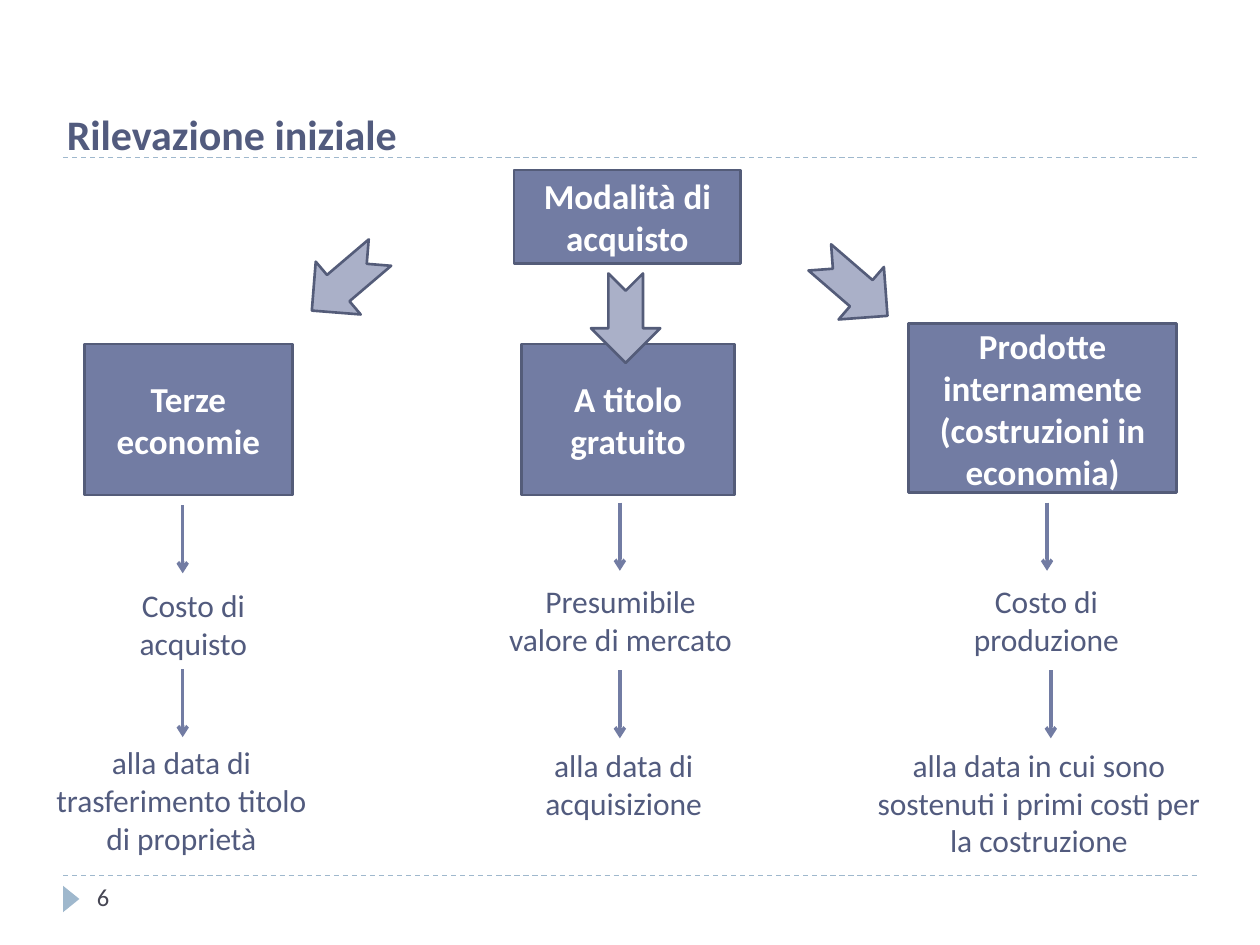
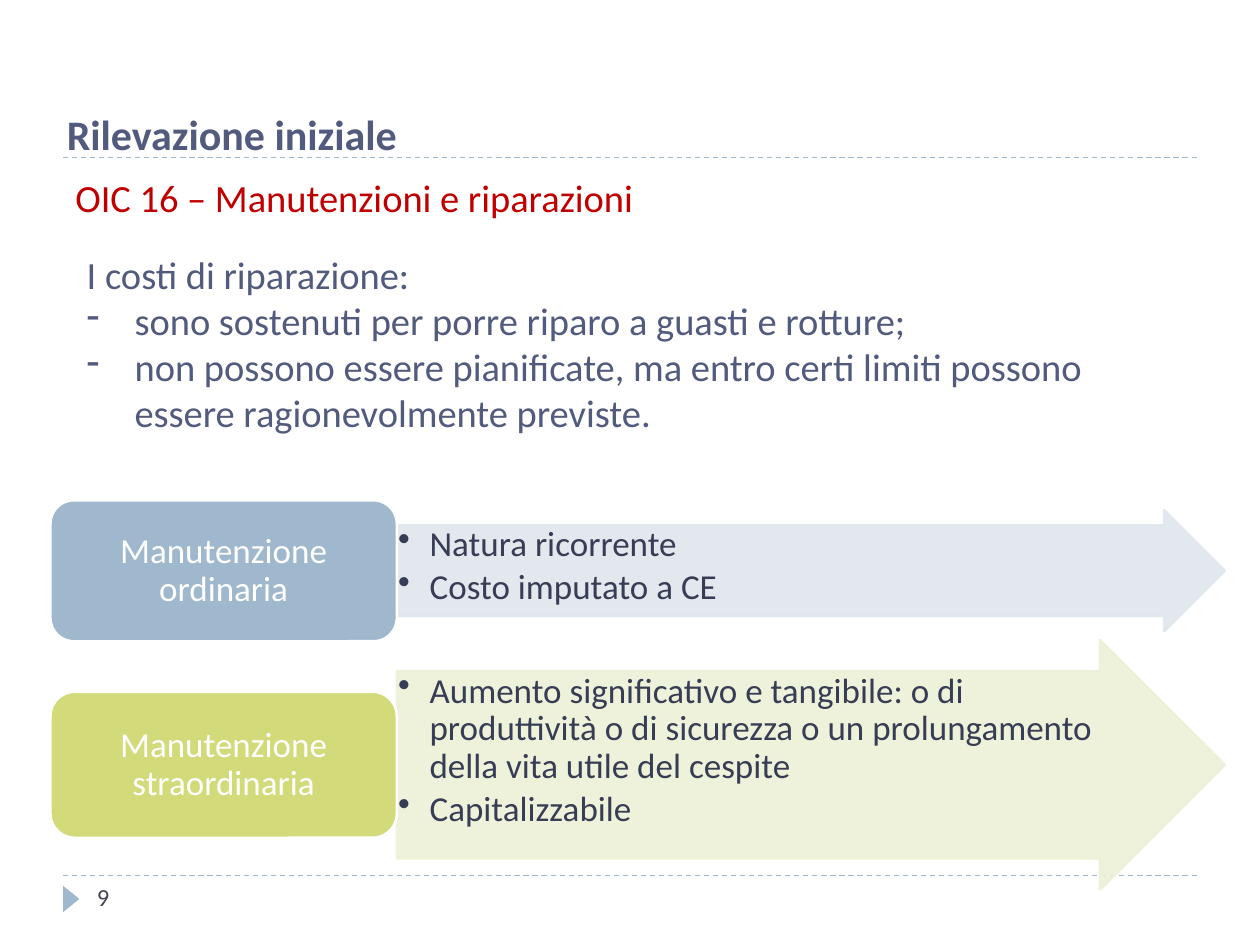
from dataclasses import dataclass

from pptx import Presentation
from pptx import util as u
from pptx.dml.color import RGBColor
from pptx.enum import dml, shapes, text
from pptx.oxml.ns import qn
from lxml import etree


@dataclass(frozen=True)
class Theme:
    font: str = "Calibri"
    slate: str = "727CA3"
    slate_edge: str = "545C79"
    slate_pale: str = "AAB0C8"
    heading: str = "525B7E"
    ink: str = "373D54"
    number: str = "464653"
    red: str = "C00000"
    sky: str = "9FB8CD"
    sky_pale: str = "DFE6ED"
    lime: str = "D2DA7A"
    lime_pale: str = "EEF1D7"
    white: str = "FFFFFF"
    title_size: int = 24
    body_size: int = 22
    box_size: int = 20
    step_size: int = 18
    number_size: int = 14


theme = Theme()
KIND = shapes.MSO_SHAPE
ALIGN = text.PP_ALIGN
ANCHOR = text.MSO_ANCHOR


def write(box, lines, size, color, bold=False, align=ALIGN.LEFT, anchor=ANCHOR.TOP,
          bullet=None, indent=0, spacing=None, after=0, inset=None):
    """Fill a shape with paragraphs; a line starting with the bullet sign gets a hanging indent."""
    frame = box.text_frame
    frame.word_wrap = True
    frame.auto_size = text.MSO_AUTO_SIZE.NONE
    frame.vertical_anchor = anchor
    if inset is not None:
        frame.margin_left = frame.margin_right = u.Inches(inset)
        frame.margin_top = frame.margin_bottom = u.Inches(inset)
    for index, line in enumerate(lines):
        para = frame.paragraphs[0] if index == 0 else frame.add_paragraph()
        para.alignment = align
        para.space_before, para.space_after = u.Pt(0), u.Pt(after)
        if spacing:
            para.line_spacing = spacing
        if bullet and line.startswith(bullet):
            line = line[len(bullet):].strip()
            props = para._p.get_or_add_pPr()
            props.set("marL", str(u.Inches(indent)))
            props.set("indent", str(-u.Inches(indent)))
            etree.SubElement(props, qn("a:buChar")).set("char", bullet)
        span = para.add_run()
        span.text = line
        span.font.name = theme.font
        span.font.size = u.Pt(size)
        span.font.bold = bold
        span.font.color.rgb = RGBColor.from_string(color)


def draw(page, kind, area, fill=None, edge=None, width=1.5):
    """Add a preset shape, or a connector from (x1, y1) to (x2, y2) when kind is None."""
    lengths = [u.Inches(value) for value in area]
    if kind is None:
        item = page.shapes.add_connector(shapes.MSO_CONNECTOR.STRAIGHT, *lengths)
        etree.SubElement(item.element.spPr, qn("a:effectLst"))
    else:
        item = page.shapes.add_shape(kind, *lengths)
        item.shadow.inherit = False
        item.fill.solid()
        item.fill.fore_color.rgb = RGBColor.from_string(fill)
    if edge:
        item.line.color.rgb = RGBColor.from_string(edge)
        item.line.width = u.Pt(width)
    else:
        item.line.fill.background()
    return item


deck = Presentation()
deck.slide_width, deck.slide_height = u.Inches(10), u.Inches(7.5)
layout = deck.slide_layouts[5]

# Shared slide parts: title and page number on each slide, rules and marker on the layout
pages = []
for number in ("6", "9"):
    page = deck.slides.add_slide(layout)
    title = page.shapes.title
    title.left, title.top = u.Inches(0.43), u.Inches(0.81)
    title.width, title.height = u.Inches(8.91), u.Inches(0.5)
    write(title, ["Rilevazione iniziale"], theme.title_size, theme.heading, bold=True)
    box = page.shapes.add_textbox(u.Inches(0.67), u.Inches(6.95), u.Inches(2.17), u.Inches(0.4))
    write(box, [number], theme.number_size, theme.number)
    pages.append(page)
purchase, upkeep = pages

marker = draw(purchase, KIND.ISOSCELES_TRIANGLE, (0.46, 7.07, 0.21, 0.13), theme.sky)
marker.rotation = 90
shared = [marker]
for y in (1.25, 6.95):
    rule = draw(purchase, None, (0.5, y, 9.5, y), edge=theme.sky, width=0.75)
    rule.line.dash_style = dml.MSO_LINE.DASH
    shared.append(rule)
for part in shared:
    layout.shapes.element.append(part.element)

# Slide 1: ways of purchase
methods = [
    ("Modalità di acquisto", (4.08, 1.35, 1.8, 0.74)),
    ("Terze economie", (0.67, 2.73, 1.65, 1.2)),
    ("A titolo gratuito", (4.14, 2.73, 1.69, 1.2)),
    ("Prodotte internamente (costruzioni in economia)", (7.21, 2.57, 2.13, 1.34)),
]
for label, area in methods:
    box = draw(purchase, KIND.RECTANGLE, area, theme.slate, theme.slate_edge)
    write(box, [label], theme.box_size, theme.white, bold=True,
          align=ALIGN.CENTER, anchor=ANCHOR.MIDDLE)

for left, top, angle in ((2.39, 1.96, 139.6), (4.61, 2.25, 90), (6.42, 2, 40.8)):
    arrow = draw(purchase, KIND.NOTCHED_RIGHT_ARROW, (left, top, 0.71, 0.55),
                 theme.slate_pale, theme.slate_edge)
    arrow.rotation = angle

# Each step: arrow x, arrow top, then the text below it
steps = [
    (1.45, 4.01, "Costo di acquisto", (0.67, 4.6, 1.73, 0.71)),
    (1.45, 5.31, "alla data di trasferimento titolo di proprietà", (0.28, 5.85, 2.32, 1.01)),
    (4.92, 3.99, "Presumibile valore di mercato", (3.9, 4.57, 2.05, 0.71)),
    (4.92, 5.32, "alla data di acquisizione", (4.06, 5.87, 1.78, 0.71)),
    (8.31, 3.99, "Costo di produzione", (7.28, 4.57, 2.05, 0.71)),
    (8.34, 5.32, "alla data in cui sono sostenuti i primi costi per la costruzione",
     (6.77, 5.87, 2.95, 1.01)),
]
for x, top, label, area in steps:
    arrow = draw(purchase, None, (x, top, x, top + 0.54), edge=theme.slate, width=2)
    etree.SubElement(arrow.line._get_or_add_ln(), qn("a:tailEnd")).set("type", "arrow")
    box = purchase.shapes.add_textbox(*[u.Inches(value) for value in area])
    write(box, [label], theme.step_size, theme.heading, align=ALIGN.CENTER)

# Slide 2: maintenance and repairs
box = upkeep.shapes.add_textbox(u.Inches(0.5), u.Inches(1.33), u.Inches(9), u.Inches(0.55))
write(box, ["OIC 16 – Manutenzioni e riparazioni"], theme.body_size, theme.red,
      align=ALIGN.JUSTIFY)
box = upkeep.shapes.add_textbox(u.Inches(0.59), u.Inches(1.94), u.Inches(8.9), u.Inches(1.58))
write(box, ["I costi di riparazione:",
            "- sono sostenuti per porre riparo a guasti e rotture;",
            "- non possono essere pianificate, ma entro certi limiti possono "
            "essere ragionevolmente previste."],
      theme.body_size, theme.heading, bullet="-", indent=0.38)

upkeep_types = [
    ("Manutenzione ordinaria", theme.sky, (0.4, 3.97, 2.75, 1.12),
     theme.sky_pale, (3.15, 4.05, 6.57, 0.96), (3.15, 4.17, 6.21, 0.72),
     ["• Natura ricorrente", "• Costo imputato a CE"]),
    ("Manutenzione straordinaria", theme.lime, (0.4, 5.49, 2.75, 1.16),
     theme.lime_pale, (3.15, 5.08, 6.57, 1.98), (3.15, 5.33, 5.83, 1.48),
     ["• Aumento significativo e tangibile: o di produttività o di sicurezza "
      "o un prolungamento della vita utile del cespite", "• Capitalizzabile"]),
]
for label, color, label_area, pale, arrow_area, text_area, effects in upkeep_types:
    arrow = draw(upkeep, KIND.RIGHT_ARROW, arrow_area, pale, pale)
    arrow.adjustments[0], arrow.adjustments[1] = 0.75, 0.5
    for tint in arrow.element.spPr.iter(qn("a:srgbClr")):
        etree.SubElement(tint, qn("a:alpha")).set("val", "90000")
    box = upkeep.shapes.add_textbox(*[u.Inches(value) for value in text_area])
    write(box, effects, theme.box_size, theme.ink, bullet="•", indent=0.25,
          spacing=0.9, after=3, inset=0.01)
    box = draw(upkeep, KIND.ROUNDED_RECTANGLE, label_area, color, theme.white)
    write(box, [label], theme.box_size, theme.white, align=ALIGN.CENTER,
          anchor=ANCHOR.MIDDLE, spacing=0.9)

deck.save("out.pptx")
